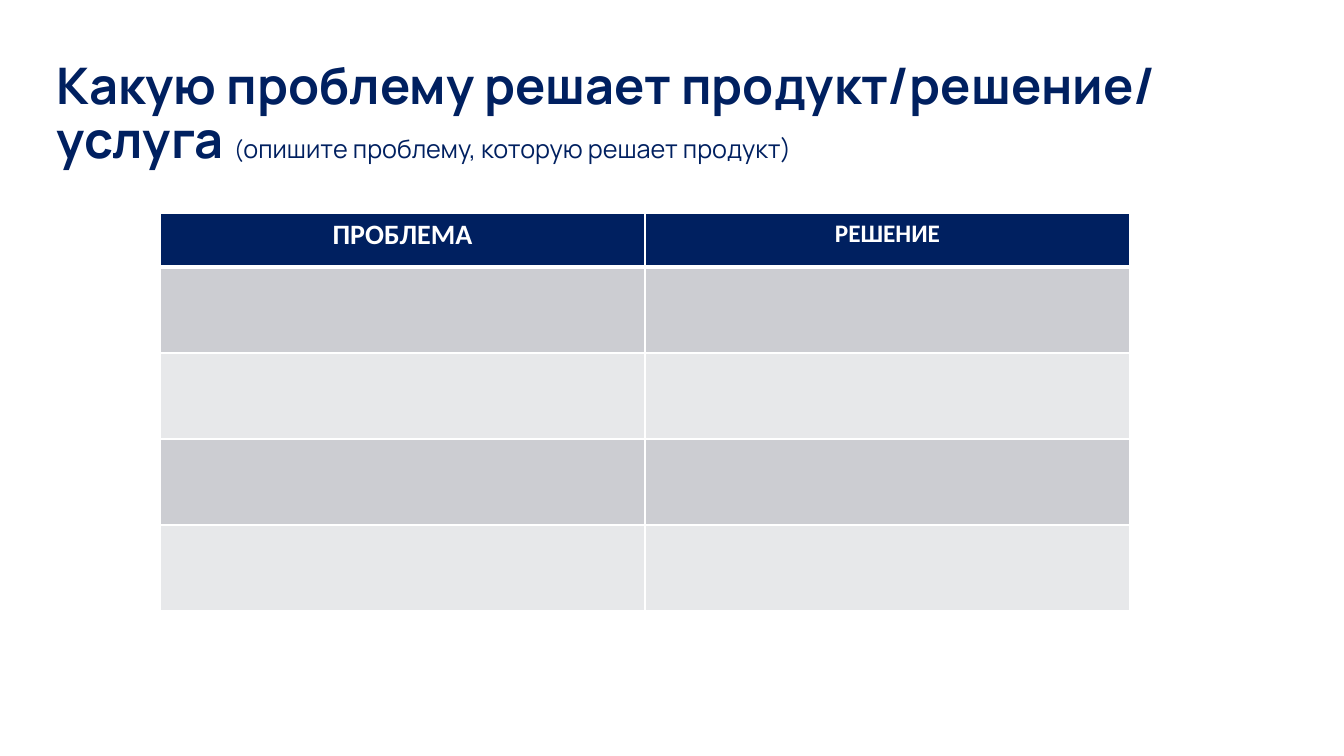
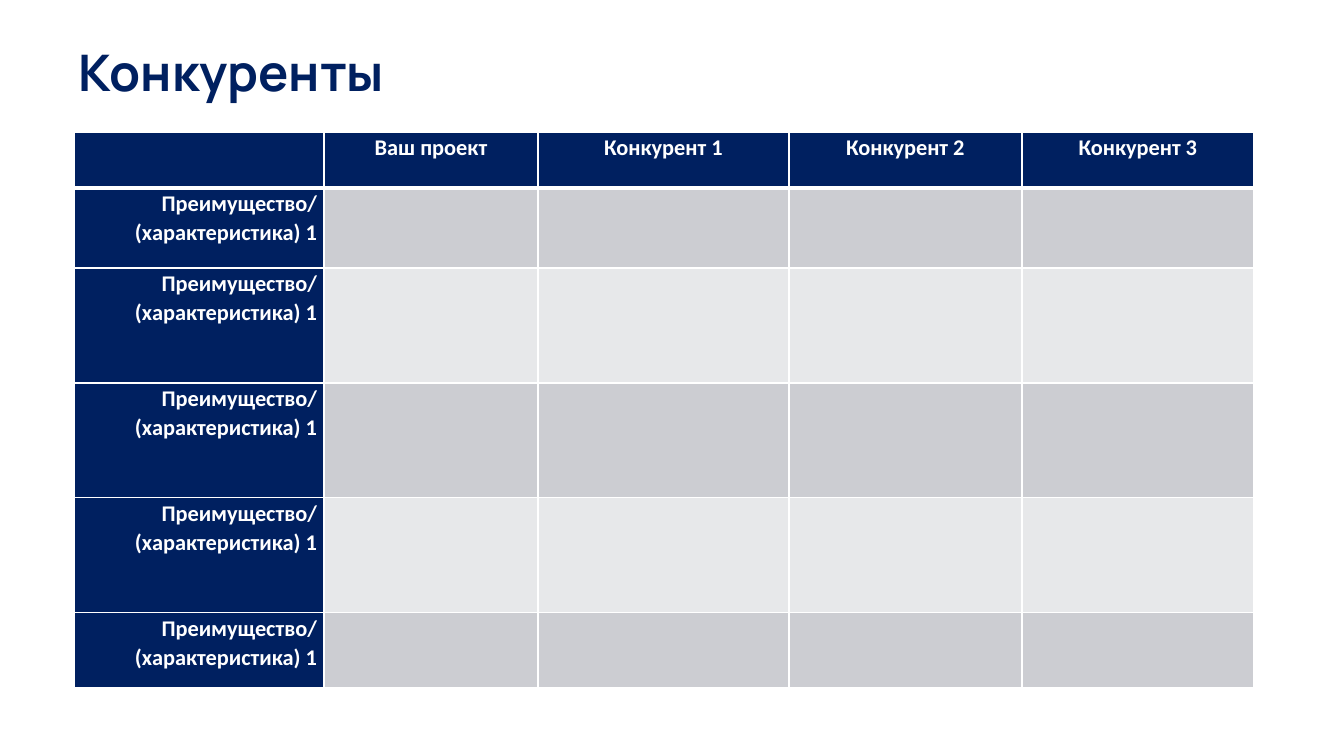
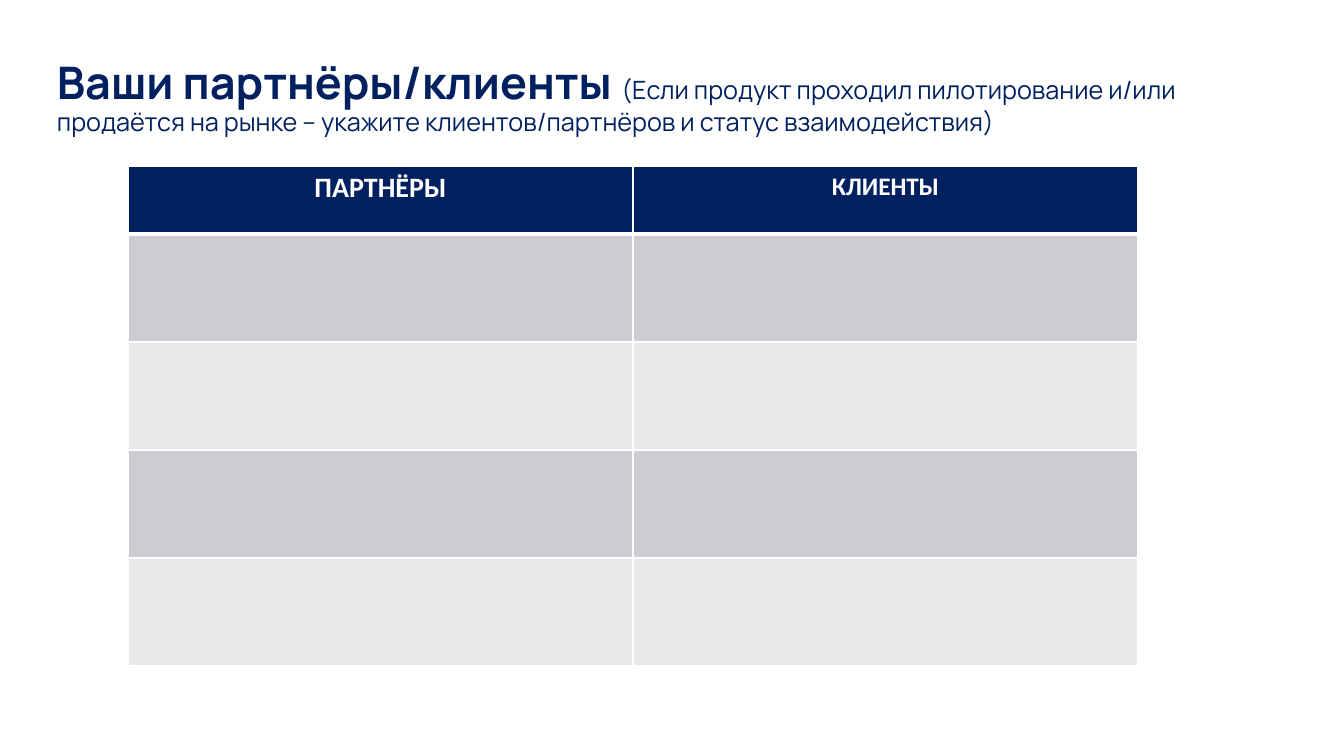
from lxml.etree import SubElement
from pptx import Presentation
from pptx.dml.color import RGBColor
from pptx.enum.text import MSO_ANCHOR, PP_ALIGN
from pptx.oxml.ns import qn
from pptx.util import Emu, Pt

EMU_PER_PX = 914400 / 100.8
COLORS = {"navy": "002060", "white": "FFFFFF", "band_dark": "CCCDD2", "band_light": "E7E8EA"}
TITLE_FONT = "Manrope"
TABLE_FONT = "Calibri"
BLANK_LAYOUT = 6


def px(length):
    return Emu(round(length * EMU_PER_PX))


def rgb(color):
    return RGBColor.from_string(COLORS[color])


def add_run(paragraph, text, size, font, color, bold):
    run = paragraph.add_run()
    run.text = text
    run.font.size = Pt(size)
    run.font.name = font
    run.font.bold = bold
    run.font.color.rgb = rgb(color)


def add_title(slide, left, top, width, height, heading, size, hints=()):
    """Bold heading followed by lighter (text, size) hints on the same line."""
    frame = slide.shapes.add_textbox(px(left), px(top), px(width), px(height)).text_frame
    frame.word_wrap = True
    frame.vertical_anchor = MSO_ANCHOR.TOP
    frame.margin_left = frame.margin_right = frame.margin_top = frame.margin_bottom = px(5)
    paragraph = frame.paragraphs[0]
    paragraph.line_spacing = 0.9
    add_run(paragraph, heading, size, TITLE_FONT, "navy", True)
    for text, hint_size in hints:
        add_run(paragraph, text, hint_size, TITLE_FONT, "navy", False)


def set_borders(cell, row):
    """White grid lines, with a thick one under the header row."""
    top = 3 if row == 1 else 1
    bottom = 3 if row == 0 else 1
    properties = cell._tc.get_or_add_tcPr()
    for position, (side, points) in enumerate((("L", 1), ("R", 1), ("T", top), ("B", bottom))):
        line = SubElement(properties, qn(f"a:ln{side}"), w=str(Pt(points)))
        fill = SubElement(line, qn("a:solidFill"))
        SubElement(fill, qn("a:srgbClr"), val=COLORS["white"])
        properties.insert(position, line)


def add_banded_table(slide, left, top, columns, rows, side_header=False):
    table = slide.shapes.add_table(
        len(rows), len(columns), px(left), px(top), px(sum(columns)), px(sum(rows))
    ).table
    table.horz_banding = False
    for column, width in zip(table.columns, columns):
        column.width = px(width)
    for row, height in zip(table.rows, rows):
        row.height = px(height)
    for row in range(len(rows)):
        band = "band_dark" if row % 2 else "band_light"
        for column in range(len(columns)):
            is_header = row == 0 or (side_header and column == 0)
            cell = table.cell(row, column)
            cell.fill.solid()
            cell.fill.fore_color.rgb = rgb("navy" if is_header else band)
            set_borders(cell, row)
    return table


def write_header(cell, text, size, align=PP_ALIGN.CENTER):
    paragraph = cell.text_frame.paragraphs[0]
    paragraph.alignment = align
    add_run(paragraph, text, size, TABLE_FONT, "white", True)


def write_compact_header(cell, text, align=PP_ALIGN.CENTER):
    cell.margin_left = cell.margin_right = px(7)
    cell.margin_top = cell.margin_bottom = 0
    write_header(cell, text, 16, align)
    cell.text_frame.paragraphs[0].line_spacing = 1.07


def add_pair_table(slide, left, top, column_width, header_height, row_height, headers):
    """Two equal columns with four empty rows to fill in."""
    table = add_banded_table(
        slide, left, top, [column_width] * 2, [header_height] + [row_height] * 4
    )
    for column, (text, size) in enumerate(zip(headers, (20, 18))):
        write_header(table.cell(0, column), text, size)


def build_problem(slide):
    add_title(
        slide, 52, 56, 1256, 131, "Какую проблему решает продукт/решение/ услуга ", 36,
        [("(", 16.2), ("опишите проблему, которую решает продукт)", 18)],
    )
    add_pair_table(slide, 160, 213, 485, 54, 86, ("ПРОБЛЕМА", "РЕШЕНИЕ"))


def build_competitors(slide):
    add_title(slide, 74, 43, 1180, 62, "Конкуренты", 36)
    columns = [250, 214, 251, 233, 232]
    rows = [56, 80, 115, 115, 115, 75]
    table = add_banded_table(slide, 74, 132, columns, rows, side_header=True)
    projects = ["Ваш проект"] + [f"Конкурент {number}" for number in range(1, 4)]
    for column, project in enumerate(projects, start=1):
        write_compact_header(table.cell(0, column), project)
    for row in range(1, len(rows)):
        write_compact_header(
            table.cell(row, 0), "Преимущество/ (характеристика) 1", PP_ALIGN.RIGHT
        )


def build_partners(slide):
    hint = (
        "(Если продукт проходил пилотирование и/или продаётся на рынке – "
        "укажите клиентов/партнёров и статус взаимодействия)"
    )
    add_title(slide, 52, 56, 1202, 131, "Ваши партнёры/клиенты ", 32, [(hint, 18)])
    add_pair_table(slide, 128, 166, 505, 68, 108, ("ПАРТНЁРЫ", "КЛИЕНТЫ"))


def main():
    deck = Presentation()
    deck.slide_width = px(1344)
    deck.slide_height = px(756)
    for build in (build_problem, build_competitors, build_partners):
        build(deck.slides.add_slide(deck.slide_layouts[BLANK_LAYOUT]))
    deck.save("out.pptx")


if __name__ == "__main__":
    main()
